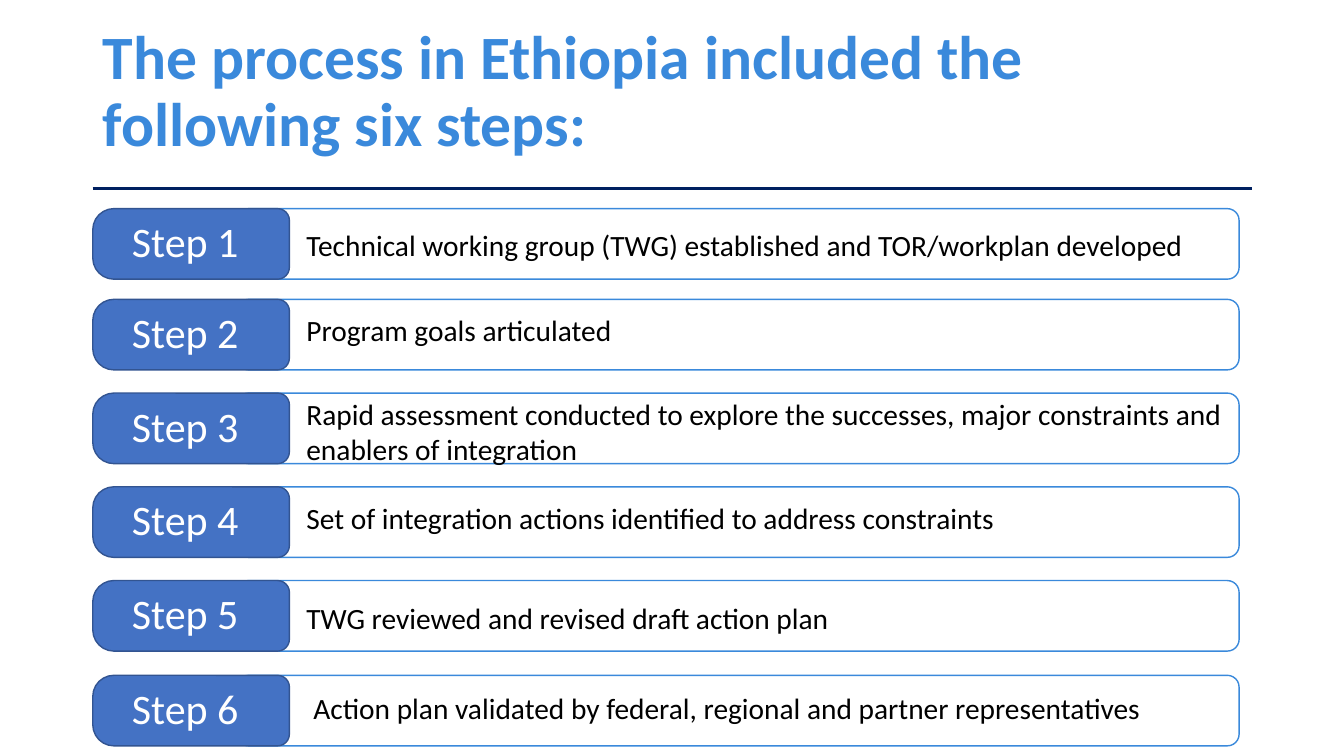
from pptx import Presentation
from pptx.dml.color import RGBColor
from pptx.enum.shapes import MSO_CONNECTOR, MSO_SHAPE
from pptx.enum.text import MSO_ANCHOR
from pptx.oxml.ns import qn
from pptx.util import Inches, Pt
from lxml.etree import SubElement


def color(code):
    return RGBColor.from_string(code)


class StepPage:
    font = "Calibri"
    accent = "3A89DB"
    navy = "002060"
    tab_fill = "4472C4"
    tab_line = "325491"
    white = "FFFFFF"
    black = "000000"

    def __init__(self, page):
        self.page = page

    def text(self, left, top, width, height, words, size, ink,
             bold=False, anchor=MSO_ANCHOR.TOP, spacing=None):
        box = self.page.shapes.add_textbox(
            Inches(left), Inches(top), Inches(width), Inches(height))
        frame = box.text_frame
        frame.word_wrap = True
        frame.vertical_anchor = anchor
        para = frame.paragraphs[0]
        if spacing:
            para.line_spacing = spacing
        span = para.add_run()
        span.text = words
        span.font.name = self.font
        span.font.size = Pt(size)
        span.font.bold = bold
        span.font.color.rgb = color(ink)

    def shape(self, kind, left, top, width, height, fill, line):
        shape = self.page.shapes.add_shape(
            kind, Inches(left), Inches(top), Inches(width), Inches(height))
        shape.shadow.inherit = False
        shape.fill.solid()
        shape.fill.fore_color.rgb = color(fill)
        shape.line.color.rgb = color(line)
        shape.line.width = Pt(1)
        return shape

    def rule(self, left, right, y):
        line = self.page.shapes.add_connector(
            MSO_CONNECTOR.STRAIGHT, Inches(left), Inches(y), Inches(right), Inches(y))
        line.line.color.rgb = color(self.navy)
        line.line.width = Pt(2.25)
        SubElement(line._element.spPr, qn("a:effectLst"))

    def step(self, number, top):
        # Outlined bar with a filled tab turned onto its left end
        bar_height, tab_length, tab_left = 0.7, 1.95, 0.92
        self.shape(MSO_SHAPE.ROUNDED_RECTANGLE, 2.35, top, 9.94, bar_height,
                   self.white, self.accent)
        shift = (tab_length - bar_height) / 2
        tab = self.shape(MSO_SHAPE.ROUND_2_SAME_RECTANGLE, tab_left + shift, top - shift,
                         bar_height, tab_length, self.tab_fill, self.tab_line)
        tab.rotation = 90
        tab.adjustments[0] = 0.167
        tab.adjustments[1] = 0.299
        self.text(1.21, top + 0.02, 1.65, 0.61, f"Step {number}", 30, self.white)


def main():
    deck = Presentation()
    deck.slide_width, deck.slide_height = Inches(13.33), Inches(7.5)
    slide = StepPage(deck.slides.add_slide(deck.slide_layouts[6]))

    # Title and rule
    slide.text(0.92, 0, 11.5, 1.85,
               "The process in Ethiopia included the following six steps:",
               44, slide.accent, bold=True, anchor=MSO_ANCHOR.MIDDLE, spacing=0.9)
    slide.rule(0.92, 12.42, 1.87)

    # Steps: bar top, text left, text top, wording
    steps = [
        (2.07, 2.94, 2.2,
         "Technical working group (TWG) established and TOR/workplan developed"),
        (2.97, 2.94, 3.05, "Program goals articulated"),
        (3.9, 2.94, 3.88,
         "Rapid assessment conducted to explore the successes, major constraints "
         "and enablers of integration"),
        (4.83, 2.94, 4.91, "Set of integration actions identified to address constraints"),
        (5.76, 2.94, 5.9, "TWG reviewed and revised draft action plan"),
        (6.7, 3.01, 6.8,
         "Action plan validated by federal, regional and partner representatives"),
    ]
    for number, (bar_top, text_left, text_top, words) in enumerate(steps, 1):
        slide.step(number, bar_top)
        slide.text(text_left, text_top, 9.35, 0.7, words, 21, slide.black)

    deck.save("out.pptx")


if __name__ == "__main__":
    main()
